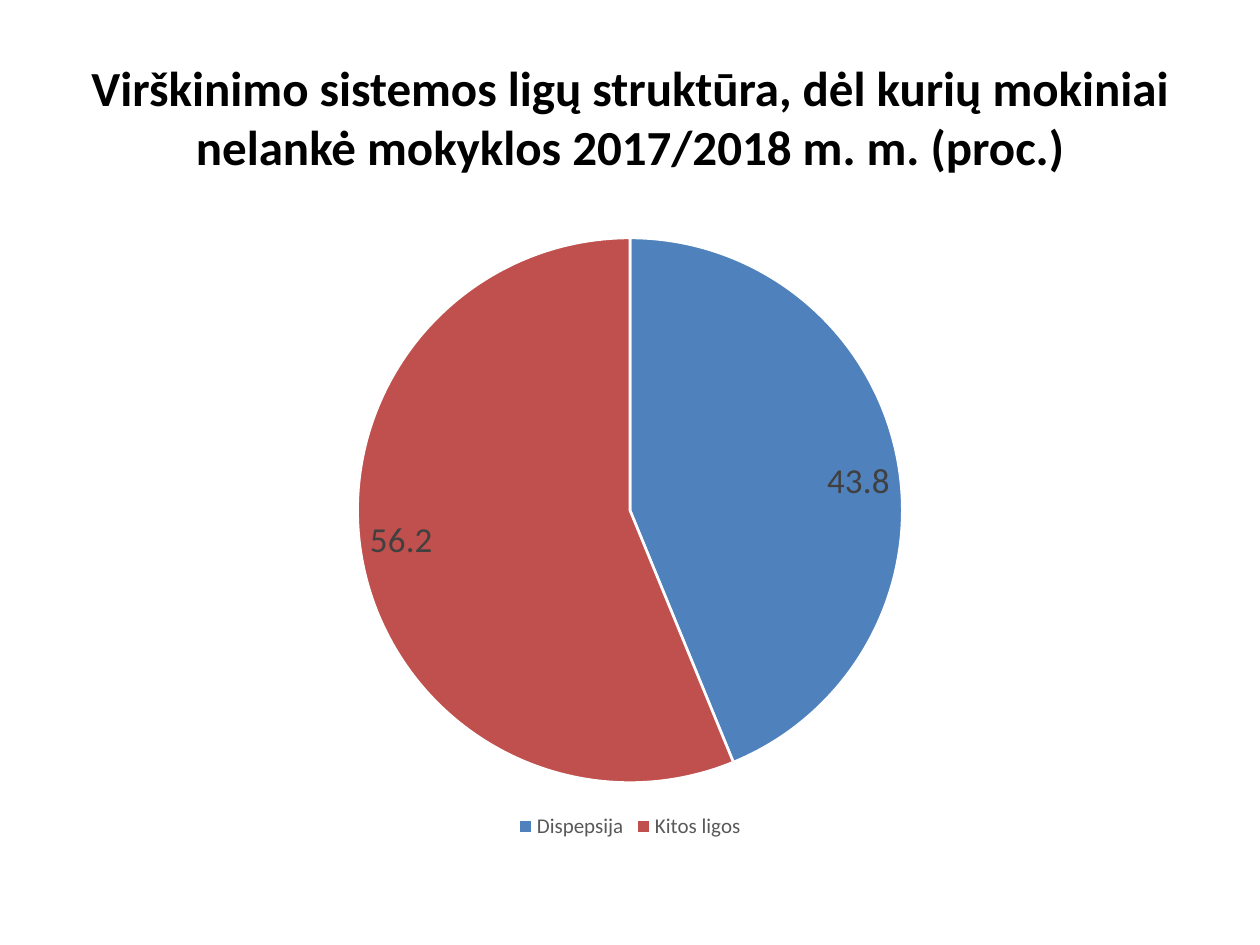
from dataclasses import dataclass

import pptx
import pptx.chart.data
import pptx.dml.color
import pptx.enum.chart
import pptx.enum.text
import pptx.util
from pptx.util import Inches

BLACK = pptx.dml.color.RGBColor(0x00, 0x00, 0x00)
WHITE = pptx.dml.color.RGBColor(0xFF, 0xFF, 0xFF)
BLUE = pptx.dml.color.RGBColor(0x4F, 0x81, 0xBD)
RED = pptx.dml.color.RGBColor(0xC0, 0x50, 0x4D)
LABEL_GREY = pptx.dml.color.RGBColor(0x40, 0x40, 0x40)
LEGEND_GREY = pptx.dml.color.RGBColor(0x59, 0x59, 0x59)
FONT = "Calibri"
MARGIN = Inches(0.5)
CONTENT_WIDTH = Inches(9)


@dataclass(frozen=True)
class Disease:
    name: str
    percent: float
    color: pptx.dml.color.RGBColor


DISEASES = [
    Disease("Dispepsija", 43.8, BLUE),
    Disease("Kitos ligos", 56.2, RED),
]


def style_font(font, size: float, color: pptx.dml.color.RGBColor, bold: bool = False) -> None:
    font.name = FONT
    font.size = pptx.util.Pt(size)
    font.bold = bold
    font.color.rgb = color


def add_text(slide, text: str, *, top: int, height: int, size: float,
             color: pptx.dml.color.RGBColor = BLACK, bold: bool = False) -> None:
    frame = slide.shapes.add_textbox(MARGIN, top, CONTENT_WIDTH, height).text_frame
    frame.word_wrap = True
    frame.vertical_anchor = pptx.enum.text.MSO_ANCHOR.MIDDLE
    paragraph = frame.paragraphs[0]
    paragraph.alignment = pptx.enum.text.PP_ALIGN.CENTER
    run = paragraph.add_run()
    run.text = text
    style_font(run.font, size, color, bold)


def add_disease_pie(slide, diseases: list[Disease], *, top: int, height: int) -> None:
    shares = pptx.chart.data.CategoryChartData(number_format="General")
    shares.categories = [disease.name for disease in diseases]
    shares.add_series("Series 1", [disease.percent for disease in diseases])
    pie = slide.shapes.add_chart(
        pptx.enum.chart.XL_CHART_TYPE.PIE, MARGIN, top, CONTENT_WIDTH, height, shares
    ).chart
    style_font(pie.font, 10, BLACK)
    pie.has_title = False
    pie.has_legend = True
    pie.legend.position = pptx.enum.chart.XL_LEGEND_POSITION.BOTTOM
    pie.legend.include_in_layout = False
    style_font(pie.legend.font, 12, LEGEND_GREY)

    plot = pie.plots[0]
    plot.vary_by_categories = True
    for index, disease in enumerate(diseases):
        slice_format = plot.series[0].points[index].format
        slice_format.fill.solid()
        slice_format.fill.fore_color.rgb = disease.color
        slice_format.line.color.rgb = WHITE
        slice_format.line.width = pptx.util.Pt(1.5)

    labels = plot.series[0].data_labels
    labels.show_value = True
    labels.show_percentage = False
    labels.position = pptx.enum.chart.XL_LABEL_POSITION.INSIDE_END
    style_font(labels.font, 20, LABEL_GREY)


def main() -> None:
    presentation = pptx.Presentation()
    presentation.slide_width = Inches(10)
    presentation.slide_height = Inches(7.5)
    slide = presentation.slides.add_slide(presentation.slide_layouts[6])
    add_text(
        slide,
        "Virškinimo sistemos ligų struktūra, dėl kurių mokiniai "
        "nelankė mokyklos 2017/2018 m. m. (proc.)",
        top=Inches(0.3), height=Inches(1.25), size=28, bold=True,
    )
    add_disease_pie(slide, DISEASES, top=Inches(1.75), height=Inches(4.95))
    presentation.save("out.pptx")


if __name__ == "__main__":
    main()
